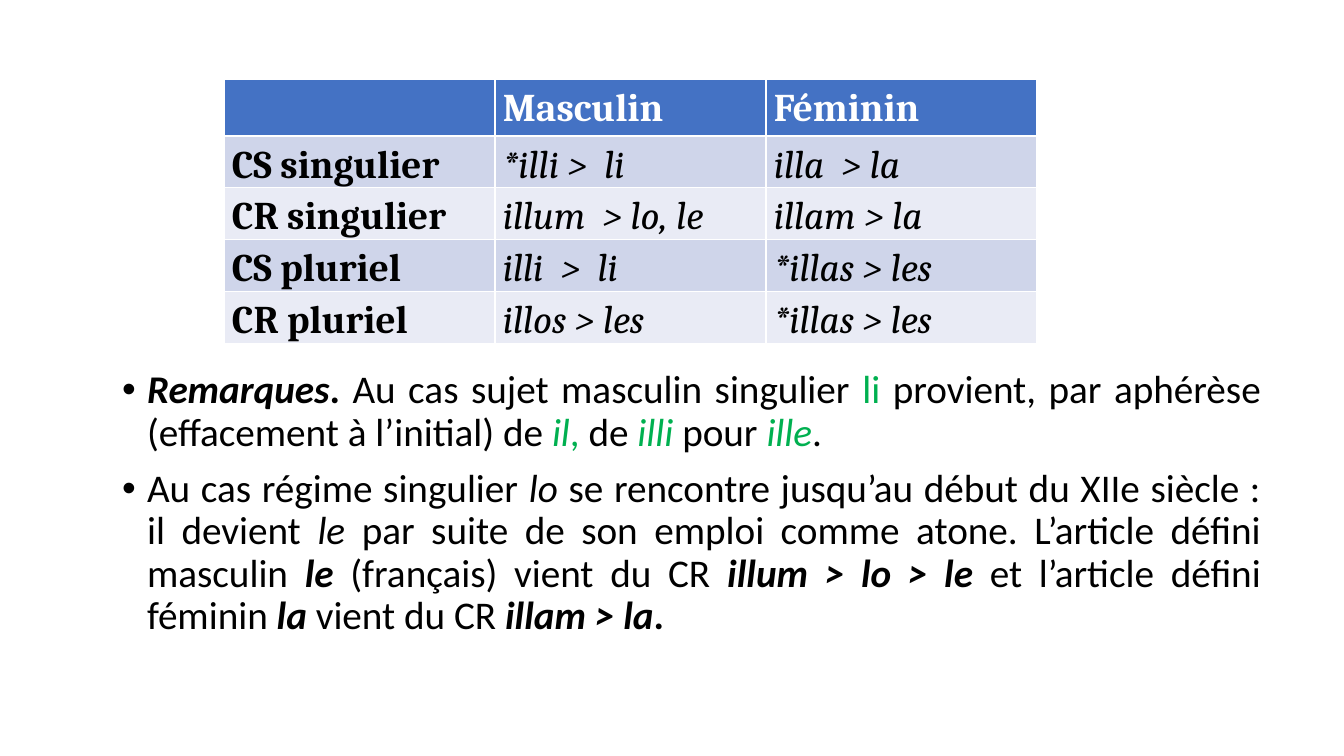
from dataclasses import dataclass

from pptx import Presentation
from pptx.dml.color import RGBColor
from pptx.enum.text import MSO_ANCHOR, MSO_AUTO_SIZE, PP_ALIGN
from pptx.util import Emu, Pt


@dataclass(frozen=True)
class Theme:
    body_font: str = "Calibri"
    table_font: str = "Cambria"
    size: int = 28
    text: str = "000000"
    accent: str = "00B050"
    header_text: str = "FFFFFF"
    header_fill: str = "4472C4"
    bands: tuple[str, str] = ("CFD5EA", "E9EBF5")


@dataclass(frozen=True)
class Span:
    text: str
    bold: bool = False
    italic: bool = False
    color: str = Theme.text


@dataclass(frozen=True)
class Box:
    left: int
    top: int
    width: int
    height: int


THEME = Theme()
SLIDE = Box(0, 0, 1344, 756)
TABLE = Box(224, 79, 813, 256)
REMARKS = Box(112, 365, 1159, 315)
HEADER_HEIGHT = 57
CELL_INSET = 8
BULLET_INDENT = 25

ARTICLES = [
    ("", "Masculin", "Féminin"),
    ("CS singulier", "*illi >  li", "illa  > la"),
    ("CR singulier", "illum  > lo, le", "illam > la"),
    ("CS pluriel", "illi  >  li", "*illas > les"),
    ("CR pluriel", "illos > les", "*illas > les"),
]

PARAGRAPHS = [
    [
        Span("Remarques", bold=True, italic=True),
        Span(".", bold=True),
        Span(" Au cas sujet masculin singulier "),
        Span("li", color=THEME.accent),
        Span(" provient, par aphérèse (effacement à l’initial) de "),
        Span("il", italic=True, color=THEME.accent),
        Span(",", color=THEME.accent),
        Span(" de "),
        Span("illi ", italic=True, color=THEME.accent),
        Span("pour "),
        Span("ille", italic=True, color=THEME.accent),
        Span("."),
    ],
    [
        Span("Au cas régime singulier "),
        Span("lo", italic=True),
        Span(" se rencontre jusqu’au début du XIIe siècle : il devient "),
        Span("le ", italic=True),
        Span("par suite de son emploi comme atone. L’article défini masculin "),
        Span("le", bold=True, italic=True),
        Span(" (français) vient du CR "),
        Span("illum > lo > le", bold=True, italic=True),
        Span(" et l’article défini féminin "),
        Span("la", bold=True, italic=True),
        Span(" vient du CR "),
        Span("illam > la", bold=True, italic=True),
        Span(".", bold=True),
    ],
]


def px(n: int) -> Emu:
    return Emu(round(n * 914400 / 100.8))


def place(s, box: Box) -> None:
    s.left, s.top = px(box.left), px(box.top)
    s.width, s.height = px(box.width), px(box.height)


def fill_cell(cell, text: str, row: int, col: int) -> None:
    """Style a cell as header, row label or example by its position."""
    header = row == 0
    cell.fill.solid()
    cell.fill.fore_color.rgb = RGBColor.from_string(
        THEME.header_fill if header else THEME.bands[(row - 1) % 2])
    cell.margin_left = cell.margin_right = px(CELL_INSET)
    cell.margin_top = cell.margin_bottom = 0
    if not text:
        return
    p = cell.text_frame.paragraphs[0]
    p.text = text
    p.alignment = PP_ALIGN.JUSTIFY
    p.line_spacing = 1.15
    p.font.name = THEME.table_font
    p.font.size = Pt(THEME.size)
    p.font.bold = header or col == 0
    p.font.italic = not header and col > 0
    p.font.color.rgb = RGBColor.from_string(
        THEME.header_text if header else THEME.text)


def add_articles(slide) -> None:
    n_rows, n_cols = len(ARTICLES), len(ARTICLES[0])
    s = slide.shapes.add_table(n_rows, n_cols, px(TABLE.left), px(TABLE.top),
                               px(TABLE.width), px(TABLE.height))
    row_height = (TABLE.height - HEADER_HEIGHT) // (n_rows - 1)
    for i, texts in enumerate(ARTICLES):
        s.table.rows[i].height = px(row_height if i else HEADER_HEIGHT)
        for j, text in enumerate(texts):
            fill_cell(s.table.cell(i, j), text, i, j)


def add_remarks(s) -> None:
    place(s, REMARKS)
    tf = s.text_frame
    tf.word_wrap = True
    tf.auto_size = MSO_AUTO_SIZE.NONE
    tf.vertical_anchor = MSO_ANCHOR.TOP
    for i, spans in enumerate(PARAGRAPHS):
        p = tf.add_paragraph() if i else tf.paragraphs[0]
        p.alignment = PP_ALIGN.JUSTIFY
        p.line_spacing = 0.9
        p.space_before = Pt(10 if i else 0)
        p.font.name = THEME.body_font
        p.font.size = Pt(THEME.size)
        pPr = p._p.get_or_add_pPr()
        pPr.set("marL", str(px(BULLET_INDENT)))
        pPr.set("indent", str(-px(BULLET_INDENT)))
        for span in spans:
            r = p.add_run()
            r.text = span.text
            r.font.bold, r.font.italic = span.bold, span.italic
            r.font.color.rgb = RGBColor.from_string(span.color)


def main() -> None:
    prs = Presentation()
    prs.slide_width, prs.slide_height = px(SLIDE.width), px(SLIDE.height)
    slide = prs.slides.add_slide(prs.slide_layouts.get_by_name("Title and Content"))
    title, body = slide.placeholders
    title.element.getparent().remove(title.element)
    add_remarks(body)
    add_articles(slide)
    prs.save("out.pptx")


if __name__ == "__main__":
    main()
